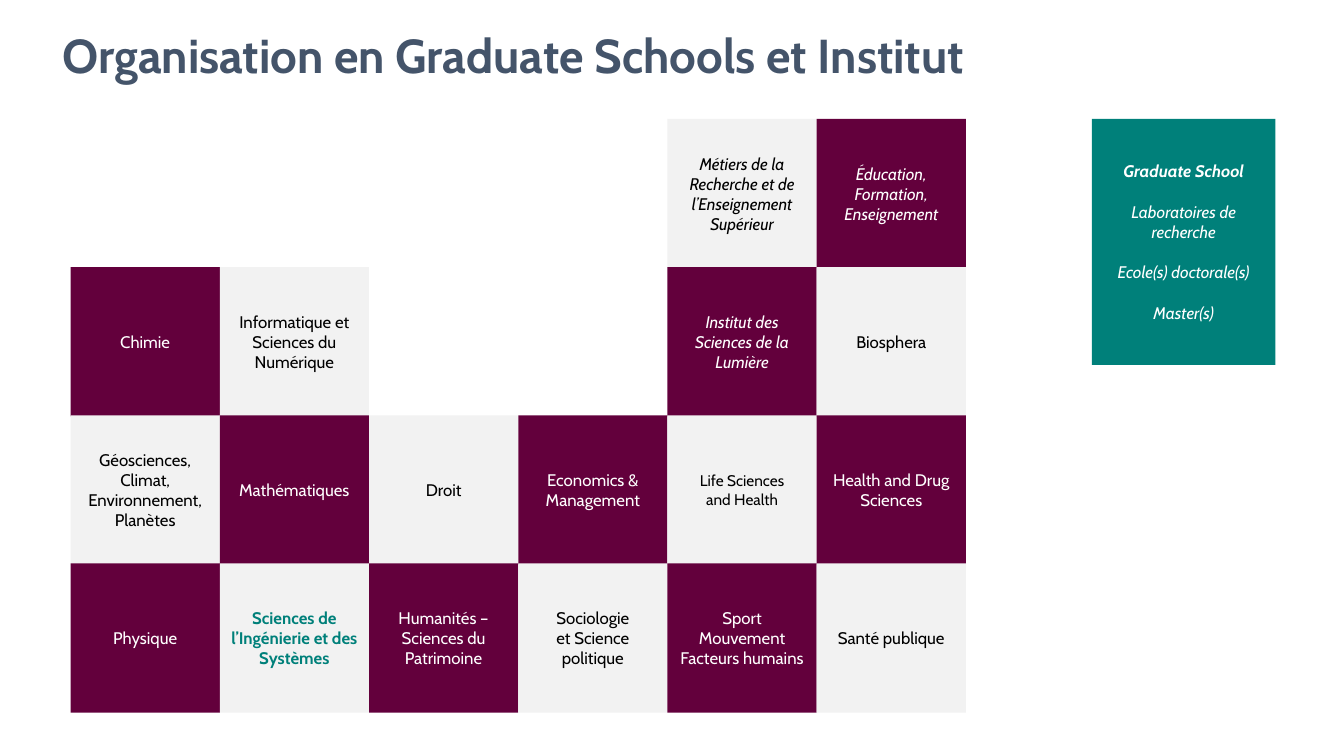
from pptx import Presentation
from pptx.dml.color import RGBColor
from pptx.enum.shapes import MSO_SHAPE as Shape
from pptx.enum.text import MSO_ANCHOR as Anchor, PP_ALIGN as Align
from pptx.util import Inches, Pt

FONT = "Cabin"
COLORS = {
    "title": "44546A",
    "plum": "63003C",
    "light": "F2F2F2",
    "teal": "00807A",
    "white": "FFFFFF",
    "black": "000000",
}

# Checkerboard of schools: position of the first cell, steps and cell side
GRID_LEFT, GRID_TOP = 0.7, 1.18
COLUMN_STEP, ROW_STEP, CELL_SIDE = 1.48, 1.47, 1.48

# One list per row; None leaves the cell empty, \v breaks a line
SCHOOLS = [
    [None, None, None, None,
     "Métiers de la Recherche et de l’Enseignement Supérieur",
     "Éducation, Formation, Enseignement"],
    ["Chimie", "Informatique et Sciences du Numérique", None, None,
     "Institut des Sciences de la Lumière", "Biosphera"],
    ["Géosciences, Climat, Environnement, Planètes", "Mathématiques", "Droit",
     "Economics & Management", "Life Sciences\vand Health",
     "Health and Drug Sciences"],
    ["Physique", "Sciences de l’Ingénierie et des Systèmes",
     "Humanités – Sciences du Patrimoine", "Sociologie\net Science politique",
     "Sport\vMouvement\vFacteurs humains", "Santé publique"],
]

# Cells (row, column) whose text differs from the rest
SPECIAL_STYLES = {
    (0, 4): {"italic": True},
    (0, 5): {"italic": True},
    (1, 4): {"italic": True},
    (2, 4): {"size": 11},
    (3, 1): {"bold": True, "color": "teal"},
}

LEGEND = ["Graduate School", "Laboratoires de recherche",
          "Ecole(s) doctorale(s)", "Master(s)"]


def rgb(name):
    return RGBColor.from_string(COLORS[name])


def format_paragraph(paragraph, align, size, color, bold=False, italic=False):
    paragraph.alignment = align
    for run in paragraph.runs:
        font = run.font
        font.name, font.size = FONT, Pt(size)
        font.bold, font.italic = bold, italic
        font.color.rgb = rgb(color)


def place(shape, left, top, width, height):
    shape.left, shape.top = Inches(left), Inches(top)
    shape.width, shape.height = Inches(width), Inches(height)


def set_title(slide, text):
    title = slide.shapes.title
    place(title, 0.52, 0.27, 11.13, 0.61)
    frame = title.text_frame
    frame.text = text
    frame.vertical_anchor = Anchor.MIDDLE
    paragraph = frame.paragraphs[0]
    paragraph.line_spacing = 0.9
    format_paragraph(paragraph, Align.LEFT, 34, "title", bold=True)


def add_box(slide, left, top, width, height, fill, text, color,
            size=12, bold=False, italic=False):
    box = slide.shapes.add_shape(Shape.RECTANGLE, Inches(left), Inches(top),
                                 Inches(width), Inches(height))
    box.shadow.inherit = False
    box.fill.solid()
    box.fill.fore_color.rgb = rgb(fill)
    box.line.fill.background()
    frame = box.text_frame
    frame.word_wrap = True
    frame.vertical_anchor = Anchor.MIDDLE
    frame.text = text
    for paragraph in frame.paragraphs:
        format_paragraph(paragraph, Align.CENTER, size, color, bold, italic)
    return box


def add_schools(slide):
    for row, names in enumerate(SCHOOLS):
        for column, name in enumerate(names):
            if name is None:
                continue
            dark = (row + column) % 2 == 1
            style = {"color": "white" if dark else "black"}
            style.update(SPECIAL_STYLES.get((row, column), {}))
            add_box(slide, GRID_LEFT + column * COLUMN_STEP,
                    GRID_TOP + row * ROW_STEP, CELL_SIDE, CELL_SIDE,
                    "plum" if dark else "light", name, **style)


def add_legend(slide):
    box = add_box(slide, 10.83, 1.18, 1.82, 2.44, "teal", "\n".join(LEGEND),
                  "white", italic=True)
    heading, *items = box.text_frame.paragraphs
    heading.runs[0].font.bold = True
    for item in items:
        item.space_before = Pt(14.5)


def main():
    presentation = Presentation()
    presentation.slide_width = Inches(13.33)
    presentation.slide_height = Inches(7.5)
    title_only = presentation.slide_layouts[5]
    slide = presentation.slides.add_slide(title_only)

    set_title(slide, "Organisation en Graduate Schools et Institut")
    add_schools(slide)
    add_legend(slide)

    presentation.save("out.pptx")


if __name__ == "__main__":
    main()
